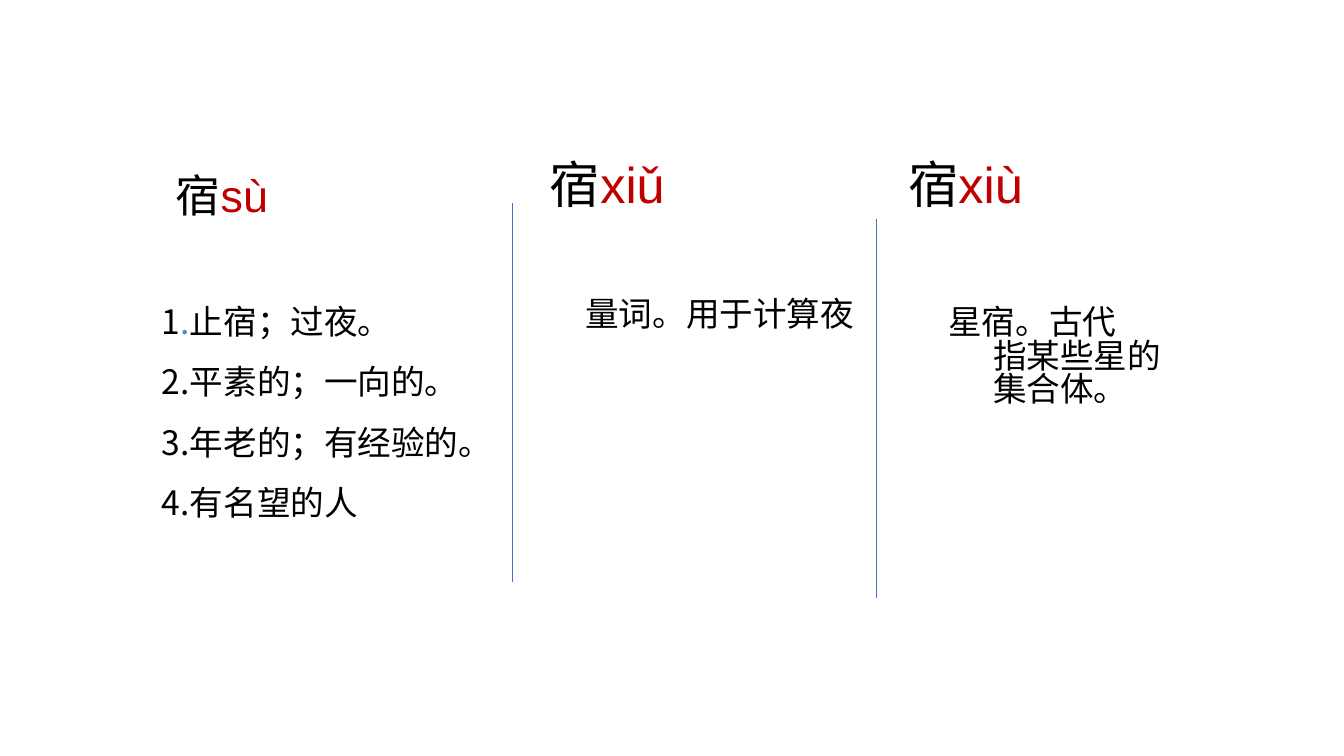
from collections import namedtuple
from dataclasses import dataclass

from lxml import etree
from pptx import Presentation
from pptx import util as u
from pptx.dml.color import RGBColor
from pptx.enum import shapes, text
from pptx.oxml import ns

Box = namedtuple("Box", "left top width height")


@dataclass(frozen=True)
class Theme:
    """Colours, fonts and type sizes of the slide."""
    ink: str = "000000"
    pinyin: str = "C00000"
    accent: str = "3E99C2"
    rule: str = "4472C4"
    chinese: str = "Noto Sans CJK SC"
    latin: str = "Arial"
    body: int = 24
    small_heading: int = 32
    heading: int = 36
    heading_leading: float = 1.2
    list_leading: int = 43
    note_leading: int = 24
    indent: float = 0.71
    hanging: float = 1.84


THEME = Theme()


def add_span(para, words, size, colour=THEME.ink, font=THEME.chinese):
    """Add one formatted run to a paragraph."""
    span = para.add_run()
    span.text = words
    span.font.size = u.Pt(size)
    span.font.name = font
    span.font.color.rgb = RGBColor.from_string(colour)
    east_asian = etree.SubElement(span.font._element, ns.qn("a:ea"))
    east_asian.set("typeface", THEME.chinese)


def add_frame(page, box):
    """Add a wrapping text box and return its text frame."""
    frame = page.shapes.add_textbox(*map(u.Cm, box)).text_frame
    frame.word_wrap = True
    return frame


def add_heading(page, box, pinyin, size, align):
    """Place the character and its reading in the box."""
    para = add_frame(page, box).paragraphs[0]
    para.alignment = align
    para.line_spacing = u.Pt(round(size * THEME.heading_leading))
    add_span(para, "宿", size)
    add_span(para, pinyin, size, THEME.pinyin, THEME.latin)


def add_meanings(page, box, lines, leading):
    """Place lines, each an indent and its coloured spans, in the box."""
    frame = add_frame(page, box)
    for index, (indent, spans) in enumerate(lines):
        para = frame.add_paragraph() if index else frame.paragraphs[0]
        para.line_spacing = u.Pt(leading)
        properties = para._p.get_or_add_pPr()
        properties.set("marL", "0")
        properties.set("indent", str(int(u.Cm(indent))))
        for words, colour in spans:
            add_span(para, words, THEME.body, colour)


def add_divider(page, left, top, height=9.55):
    """Draw a thin vertical rule between two columns."""
    rule = page.shapes.add_connector(
        shapes.MSO_CONNECTOR.STRAIGHT,
        *map(u.Cm, (left, top, left, top + height)))
    rule.line.color.rgb = RGBColor.from_string(THEME.rule)
    rule.line.width = u.Pt(0.5)
    etree.SubElement(rule._element.spPr, ns.qn("a:effectLst"))


def build_readings(page):
    """Lay out the three readings of the character in columns."""
    ink, align = THEME.ink, text.PP_ALIGN
    add_heading(page, Box(2.84, 4.11, 5.51, 1.63), "sù",
                THEME.small_heading, align.CENTER)
    add_heading(page, Box(13.61, 3.73, 4.6, 1.8), "xiǔ",
                THEME.heading, align.LEFT)
    add_heading(page, Box(22.03, 3.73, 4.6, 1.8), "xiù",
                THEME.heading, align.CENTER)

    senses = [[("1", ink), (".", THEME.accent), ("止宿；过夜。", ink)]]
    senses += [[(words, ink)] for words in (
        "2.平素的；一向的。", "3.年老的；有经验的。", "4.有名望的人")]
    add_meanings(page, Box(3.12, 6.96, 9.83, 8),
                 [(THEME.indent, spans) for spans in senses],
                 THEME.list_leading)
    add_meanings(page, Box(13.79, 7.42, 8.28, 5),
                 [(THEME.indent, [("量词。用于计算夜", ink)])],
                 THEME.note_leading)
    add_meanings(page, Box(22.94, 7.63, 9.68, 5),
                 [(THEME.indent, [("星宿。古代", ink)]),
                  (THEME.hanging, [("指某些星的", ink)]),
                  (THEME.hanging, [("集合体。", ink)])],
                 THEME.note_leading)

    add_divider(page, 12.9, 5.12)
    add_divider(page, 22.08, 5.53)


def main():
    """Build the deck and save it."""
    deck = Presentation()
    deck.slide_width, deck.slide_height = u.Cm(33.87), u.Cm(19.05)
    build_readings(deck.slides.add_slide(deck.slide_layouts[6]))
    deck.save("out.pptx")


if __name__ == "__main__":
    main()
